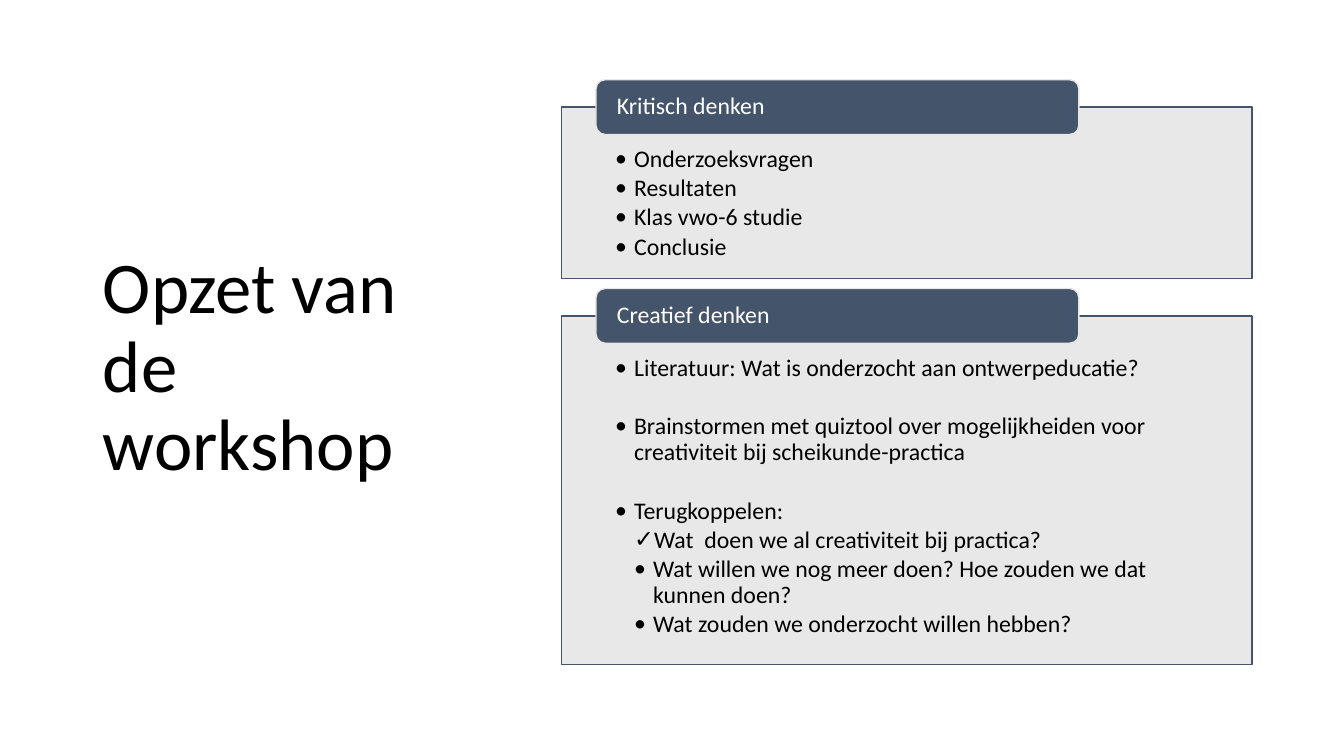
from lxml.etree import SubElement
from pptx import Presentation
from pptx.dml.color import RGBColor
from pptx.enum.shapes import MSO_SHAPE as Shape
from pptx.enum.text import MSO_ANCHOR as Anchor, MSO_AUTO_SIZE as AutoSize, PP_ALIGN as Align
from pptx.oxml.ns import qn
from pptx.util import Cm, Pt

BLACK = RGBColor(0x00, 0x00, 0x00)
WHITE = RGBColor(0xFF, 0xFF, 0xFF)
SLATE = RGBColor(0x44, 0x54, 0x6A)
LIGHT_GREY = RGBColor(0xE7, 0xE6, 0xE6)

FONT = "Calibri"
BODY_SIZE = 17
LINE_SPACING = 0.9
ITEM_GAP = 2.55
TOPIC_GAP = 23.5

PANEL_LEFT, PANEL_WIDTH = 14.15, 17.4
HEADER_LEFT, HEADER_WIDTH, HEADER_HEIGHT = 15.02, 12.17, 1.38
INDENT = 0.48

# Each item: text, level, bullet, space after in points
CRITICAL_ITEMS = [
    (text, 1, "•", ITEM_GAP)
    for text in ("Onderzoeksvragen", "Resultaten", "Klas vwo-6 studie", "Conclusie")
]
CREATIVE_ITEMS = [
    ("Literatuur: Wat is onderzocht aan ontwerpeducatie?", 1, "•", TOPIC_GAP),
    ("Brainstormen met quiztool over mogelijkheiden voor "
     "creativiteit bij scheikunde-practica", 1, "•", TOPIC_GAP),
    ("Terugkoppelen:", 1, "•", ITEM_GAP),
    ("Wat  doen we al creativiteit bij practica?", 2, "✓", ITEM_GAP),
    ("Wat willen we nog meer doen? Hoe zouden we dat kunnen doen?", 2, "•", ITEM_GAP),
    ("Wat zouden we onderzocht willen hebben?", 2, "•", ITEM_GAP),
]
# Each section: heading, panel top, panel height, items
SECTIONS = [
    ("Kritisch denken", 2.7, 4.32, CRITICAL_ITEMS),
    ("Creatief denken", 7.96, 8.79, CREATIVE_ITEMS),
]


def write(paragraph, text, size, color):
    paragraph.alignment = Align.LEFT
    paragraph.line_spacing = LINE_SPACING
    run = paragraph.add_run()
    run.text = text
    run.font.name = FONT
    run.font.size = Pt(size)
    run.font.color.rgb = color


def set_bullet(paragraph, level, bullet):
    paragraph.level = level
    properties = paragraph._p.get_or_add_pPr()
    properties.set("marL", str(Cm(INDENT * level)))
    properties.set("indent", str(-Cm(INDENT)))
    SubElement(properties, qn("a:buFont"), typeface=FONT)
    SubElement(properties, qn("a:buChar"), char=bullet)


def add_block(slide, preset, box, fill, line, insets, anchor):
    block = slide.shapes.add_shape(preset, *(Cm(length) for length in box))
    block.shadow.inherit = False
    block.fill.solid()
    block.fill.fore_color.rgb = fill
    block.line.color.rgb = line
    block.line.width = Pt(1)
    frame = block.text_frame
    frame.word_wrap = True
    frame.vertical_anchor = anchor
    frame.margin_left = frame.margin_right = Cm(insets[0])
    frame.margin_top, frame.margin_bottom = Cm(insets[1]), Cm(insets[2])
    return block


def add_panel(slide, top, height, items):
    panel = add_block(slide, Shape.RECTANGLE, (PANEL_LEFT, top, PANEL_WIDTH, height),
                      LIGHT_GREY, SLATE, (1.35, 1, 0.33), Anchor.TOP)
    # Slightly see-through fill
    fill_color = panel._element.spPr.find(qn("a:solidFill"))[0]
    SubElement(fill_color, qn("a:alpha"), val="90000")
    frame = panel.text_frame
    for index, (text, level, bullet, gap) in enumerate(items):
        item = frame.add_paragraph() if index else frame.paragraphs[0]
        set_bullet(item, level, bullet)
        item.space_after = Pt(gap)
        write(item, text, BODY_SIZE, BLACK)


def add_header(slide, panel_top, heading):
    # The header straddles the top edge of its panel
    box = (HEADER_LEFT, panel_top - HEADER_HEIGHT / 2, HEADER_WIDTH, HEADER_HEIGHT)
    header = add_block(slide, Shape.ROUNDED_RECTANGLE, box, SLATE, LIGHT_GREY,
                       (0.46, 0, 0), Anchor.MIDDLE)
    write(header.text_frame.paragraphs[0], heading, BODY_SIZE, WHITE)


def set_title(slide, text):
    title = slide.shapes.title
    title.left, title.top, title.width, title.height = Cm(2.34), Cm(1.55), Cm(9.37), Cm(15.47)
    frame = title.text_frame
    frame.word_wrap = True
    frame.auto_size = AutoSize.NONE
    frame.vertical_anchor = Anchor.MIDDLE
    write(frame.paragraphs[0], text, 52, BLACK)


def main():
    deck = Presentation()
    deck.slide_width, deck.slide_height = Cm(33.87), Cm(19.05)
    slide = deck.slides.add_slide(deck.slide_layouts[5])

    set_title(slide, "Opzet van de workshop")

    # Sections of the workshop
    for heading, top, height, items in SECTIONS:
        add_panel(slide, top, height, items)
        add_header(slide, top, heading)

    deck.save("out.pptx")


if __name__ == "__main__":
    main()
